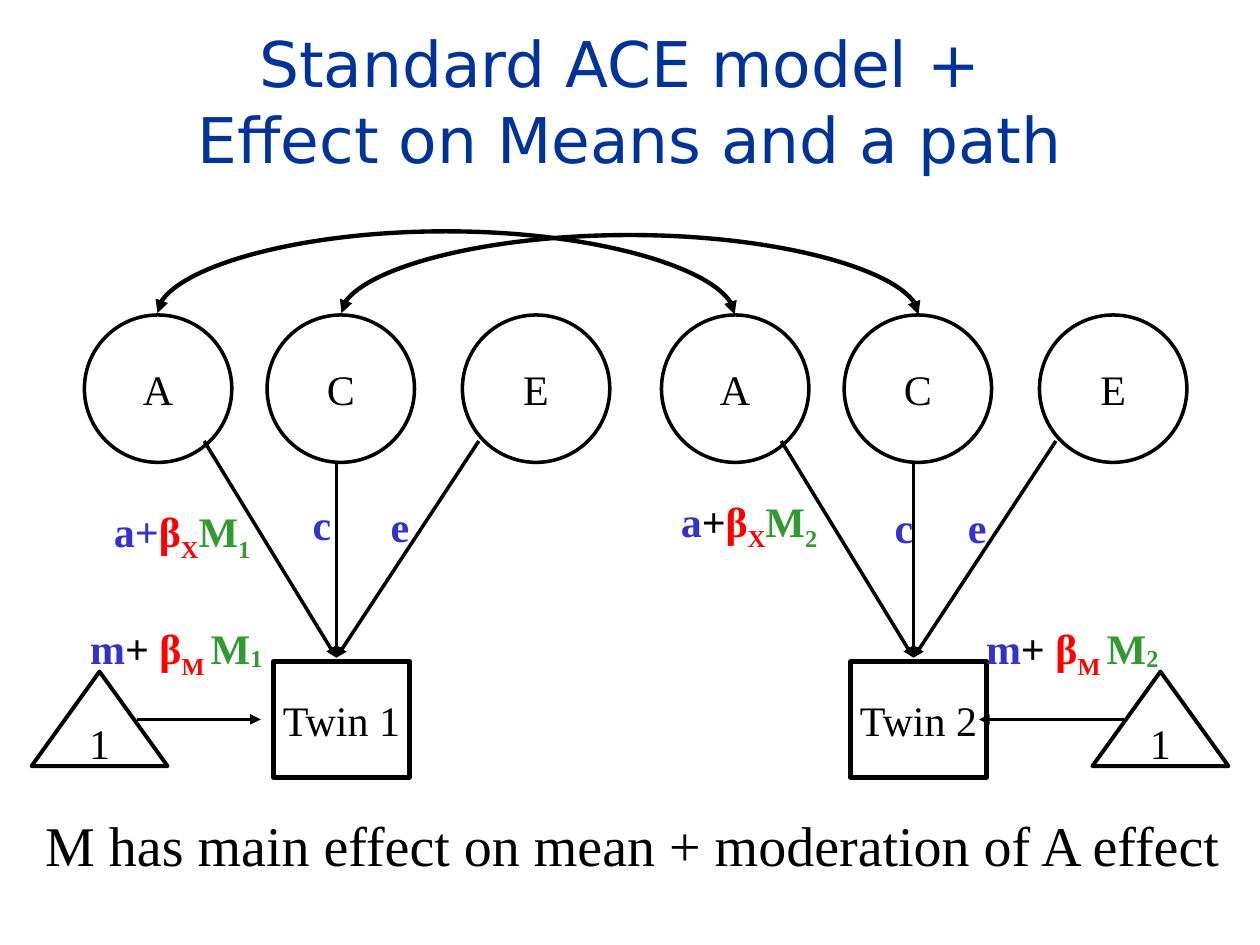
from pptx import Presentation
from pptx.dml.color import RGBColor
from pptx.enum.shapes import MSO_CONNECTOR, MSO_SHAPE
from pptx.enum.text import MSO_ANCHOR, MSO_AUTO_SIZE, PP_ALIGN
from pptx.oxml.ns import qn
from pptx.util import Inches, Pt
from lxml.etree import SubElement

BLACK = RGBColor(0x00, 0x00, 0x00)
WHITE = RGBColor(0xFF, 0xFF, 0xFF)
NAVY = RGBColor(0x00, 0x33, 0x99)
BLUE = RGBColor(0x33, 0x33, 0xCC)
RED = RGBColor(0xFF, 0x00, 0x00)
GREEN = RGBColor(0x33, 0x99, 0x33)


def write(shape, runs, size=24, font="Times New Roman", bold=False,
          align=PP_ALIGN.CENTER, anchor=MSO_ANCHOR.MIDDLE, wrap=False,
          fit=MSO_AUTO_SIZE.NONE):
    """Fill a shape with runs of (text, colour, baseline shift in percent)."""
    frame = shape.text_frame
    frame.word_wrap = wrap
    frame.auto_size = fit
    frame.vertical_anchor = anchor
    paragraph = frame.paragraphs[0]
    paragraph.alignment = align
    for number, (text, color, shift) in enumerate(runs):
        for line_number, line in enumerate(text.split("\n")):
            if line_number:
                paragraph.add_line_break()
            run = paragraph.add_run()
            run.text = line
            run.font.size = Pt(size)
            run.font.name = font
            run.font.bold = bold
            run.font.color.rgb = color
            if shift:
                run.font._element.set("baseline", str(shift * 1000))


def draw_arrow(kind, start, end, width=2, ends=("tailEnd",)):
    """Draw a black connector with triangles at the named ends."""
    arrow = slide.shapes.add_connector(
        kind, *[Inches(value) for value in (*start, *end)])
    arrow.line.color.rgb = BLACK
    arrow.line.width = Pt(width)
    properties = arrow._element.spPr
    for end_name in ends:
        SubElement(properties.find(qn("a:ln")), qn("a:" + end_name), type="triangle")
    SubElement(properties, qn("a:effectLst"))
    return arrow


prs = Presentation()
prs.slide_width, prs.slide_height = Inches(10), Inches(7.5)
slide = prs.slides.add_slide(prs.slide_layouts[5])

# Title
title = slide.shapes.title
title.left, title.top = Inches(0.75), Inches(0.17)
title.width, title.height = Inches(8.5), Inches(1.25)
write(title, [("Standard ACE model + \nEffect on Means and a path", NAVY, 0)],
      size=36, font="DejaVu Sans", wrap=True)

# Both twins share one layout; the second is shifted to the right
TWIN_GAP = 4.58
for twin in (1, 2):
    shift = TWIN_GAP * (twin - 1)
    triangle_left = (0.25, 8.67)[twin - 1]

    # Latent factors, observed twin and mean
    nodes = [(MSO_SHAPE.OVAL, left + shift, 2.5, 1.17, 1.17, 2, factor)
             for factor, left in (("A", 0.67), ("C", 2.12), ("E", 3.67))]
    nodes += [
        (MSO_SHAPE.RECTANGLE, 2.17 + shift, 5.25, 1.08, 0.92, 2.5, f"Twin {twin}"),
        (MSO_SHAPE.ISOSCELES_TRIANGLE, triangle_left, 5.33, 1.08, 0.75, 2.25, "1"),
    ]
    for preset, left, top, width, height, outline, name in nodes:
        node = slide.shapes.add_shape(
            preset, Inches(left), Inches(top), Inches(width), Inches(height))
        node.shadow.inherit = False
        node.fill.solid()
        node.fill.fore_color.rgb = WHITE
        node.line.color.rgb = BLACK
        node.line.width = Pt(outline)
        write(node, [(name, BLACK, 0)])

    # Paths from the factors and from the mean
    for x, y in ((1.62, 3.5), (2.67, 3.67), (3.8, 3.5)):
        draw_arrow(MSO_CONNECTOR.STRAIGHT, (x + shift, y), (2.67 + shift, 5.22))
    mean_start, mean_end = ((1.09, 2.07), (8.92, 7.77))[twin - 1]
    draw_arrow(MSO_CONNECTOR.STRAIGHT, (mean_start, 5.71), (mean_end, 5.71))

    # Path labels
    plus_color = (BLUE, BLACK)[twin - 1]
    a_left, a_top = ((0.75, 3.99), (5.25, 3.91))[twin - 1]
    c_left, c_top = ((2.38, 3.91), (7, 3.93))[twin - 1]
    e_left, e_top = ((3, 3.92), (7.58, 3.93))[twin - 1]
    m_left = (0.58, 7.69)[twin - 1]
    labels = [
        (a_left, a_top, 1.39, True,
         [("a", BLUE, 0), ("+", plus_color, 0), ("β", RED, 0), ("X", RED, -25),
          ("M", GREEN, 0), (str(twin), GREEN, -25)]),
        (c_left, c_top, 0.35, False, [("c", BLUE, 0)]),
        (e_left, e_top, 0.35, False, [("e", BLUE, 0)]),
        (m_left, 4.92, 1.64, True,
         [("m", BLUE, 0), ("+", BLACK, 0), (" β", RED, 0), ("M ", RED, -25),
          ("M", GREEN, 0), (str(twin), GREEN, -6)]),
    ]
    for left, top, width, wrap, runs in labels:
        label = slide.shapes.add_textbox(
            Inches(left), Inches(top), Inches(width), Inches(0.5))
        write(label, runs, bold=True, wrap=wrap,
              fit=MSO_AUTO_SIZE.SHAPE_TO_FIT_TEXT)

# Curved correlations between the twins' A and C factors:
# an upright connector turned by 90 degrees, bulging upwards
DEPTH = 0.01
for center, bulge in ((3.54, 0.66), (5, 0.63)):
    left = center - DEPTH / 2
    correlation = draw_arrow(
        MSO_CONNECTOR.CURVE, (left, 2.49 + TWIN_GAP / 2),
        (left + DEPTH, 2.49 - TWIN_GAP / 2), width=2.5, ends=("headEnd", "tailEnd"))
    properties = correlation._element.spPr
    properties.find(qn("a:xfrm")).set("rot", str(90 * 60000))
    guides = properties.find(qn("a:prstGeom")).find(qn("a:avLst"))
    SubElement(guides, qn("a:gd"), name="adj1",
               fmla=f"val {round(-bulge / DEPTH * 100000)}")

# Conclusion
conclusion = slide.shapes.add_textbox(
    Inches(0.26), Inches(6.38), Inches(9.62), Inches(0.64))
write(conclusion, [("M has main effect on mean + moderation of A effect", BLACK, 0)],
      size=32, align=PP_ALIGN.LEFT, anchor=MSO_ANCHOR.TOP,
      fit=MSO_AUTO_SIZE.SHAPE_TO_FIT_TEXT)

prs.save("out.pptx")
